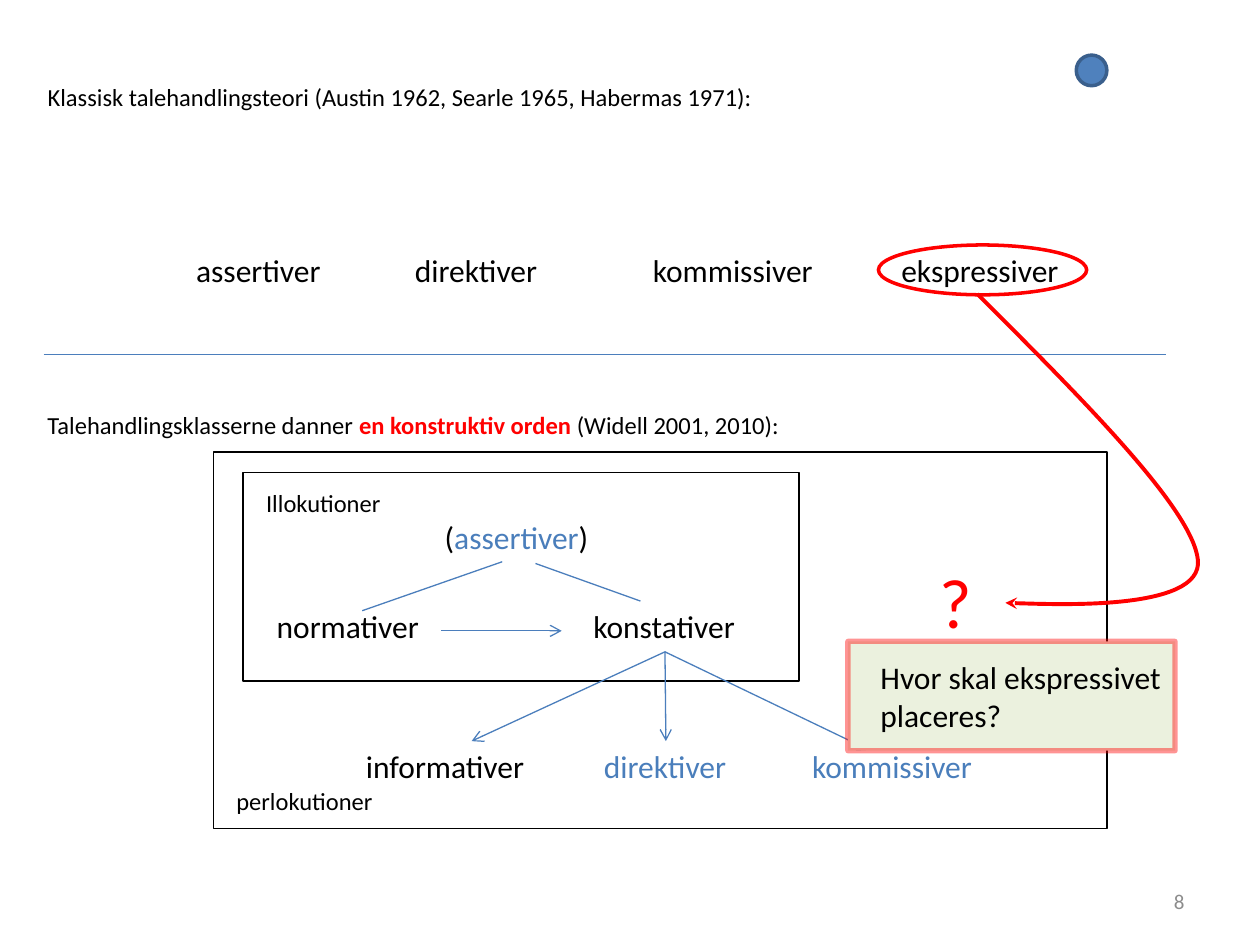
from lxml import etree
from pptx import Presentation
from pptx.dml.color import RGBColor
from pptx.enum import shapes, text
from pptx.oxml import ns
from pptx.util import Pt

COLORS = {"black": "000000", "red": "FF0000", "blue": "4A7EBB", "line": "4B7EBC",
          "dot": "4F81BD", "dot_line": "3A5F8C", "green": "EBF1DE", "grey": "8C8C8C"}
LEFT = text.PP_ALIGN.LEFT
TOP = text.MSO_ANCHOR.TOP


def rgb(name):
    return RGBColor.from_string(COLORS[name])


def sub(parent, tag, **attrs):
    return etree.SubElement(parent, ns.qn(tag), attrs)


def write(sp, paras, size=18, align=LEFT, anchor=TOP, wrap=False, fit=True):
    tf = sp.text_frame
    tf.word_wrap = wrap
    tf.auto_size = text.MSO_AUTO_SIZE.SHAPE_TO_FIT_TEXT if fit else text.MSO_AUTO_SIZE.NONE
    tf.vertical_anchor = anchor
    for i, runs in enumerate(paras):
        p = tf.paragraphs[0] if i == 0 else tf.add_paragraph()
        p.alignment = align
        for words, color, bold in runs:
            r = p.add_run()
            r.text = words
            r.font.name, r.font.size, r.font.bold = "Calibri", Pt(size), bold
            r.font.color.rgb = rgb(color)
    return sp


def plain(words, color="black"):
    return [[(words, color, False)]]


def label(s, x, y, w, paras, size=18, h=29, **options):
    return write(s.shapes.add_textbox(Pt(x), Pt(y), Pt(w), Pt(h)), paras, size, **options)


def outline(s, kind, x, y, w, h, color, width, fill=None):
    sp = s.shapes.add_shape(kind, Pt(x), Pt(y), Pt(w), Pt(h))
    sp.shadow.inherit = False
    sp.line.color.rgb, sp.line.width = rgb(color), Pt(width)
    if fill:
        sp.fill.solid()
        sp.fill.fore_color.rgb = rgb(fill)
    else:
        sp.fill.background()
    return sp


def line(s, x1, y1, x2, y2, arrow=False):
    c = s.shapes.add_connector(shapes.MSO_CONNECTOR.STRAIGHT, Pt(x1), Pt(y1), Pt(x2), Pt(y2))
    c.line.color.rgb, c.line.width = rgb("line"), Pt(0.75)
    if arrow:
        sub(c.line._get_or_add_ln(), "a:tailEnd", type="arrow")
    sub(c._element.spPr, "a:effectLst")
    return c


def classic_theory(s, x, y):
    title = s.shapes.title
    title.left, title.top, title.width, title.height = Pt(x), Pt(y), Pt(421), Pt(24.5)
    write(title, plain("Klassisk talehandlingsteori (Austin 1962, Searle 1965, Habermas 1971):"), 14)
    for words, dx, w in (("assertiver", 85, 86), ("direktiver", 210, 85),
                         ("kommissiver", 346, 107), ("ekspressiver", 488, 105)):
        label(s, x + dx, y + 96.5, w, plain(words))
    outline(s, shapes.MSO_SHAPE.OVAL, x + 482, y + 96.5, 119, 28.5, "red", 2)
    line(s, x + 5, y + 159, x + 646, y + 159)


def constructive_order(s, x, y, w, h):
    label(s, x - 102, y - 28, 433,
          [[("Talehandlingsklasserne danner ", "black", False),
            ("en konstruktiv orden ", "red", True),
            ("(Widell 2001, 2010):", "black", False)]], 14, 24.5)
    outline(s, shapes.MSO_SHAPE.RECTANGLE, x, y, w, h, "black", 1)
    outline(s, shapes.MSO_SHAPE.RECTANGLE, x + 17, y + 11.5, 317.5, 119, "black", 1)
    label(s, x + 23, y + 17, 81, plain("Illokutioner"), 14, 24.5)
    label(s, x + 6, y + 187, 94, plain("perlokutioner"), 14, 24.5)
    label(s, x + 125, y + 34, 102, [[("(", "black", False), ("assertiver", "blue", False),
                                     (")", "black", False)]])
    label(s, x + 29, y + 85, 96, plain("normativer"))
    source = label(s, x + 210, y + 85, 96, plain("konstativer"))
    label(s, x + 80, y + 165, 106, plain("informativer"))
    target = label(s, x + 216, y + 165, 85, plain("direktiver", "blue"))
    label(s, x + 335, y + 165, 107, plain("kommissiver", "blue"))

    line(s, x + 165, y + 62.5, x + 85, y + 90.5)
    line(s, x + 184, y + 63.5, x + 244, y + 85)
    line(s, x + 130, y + 102, x + 199, y + 102, True)
    for dx, dy, goal in ((147.5, 165, None), (258.5, 165, target), (374.5, 170, None)):
        c = line(s, x + 258, y + 114, x + dx, y + dy, True)
        c.begin_connect(source, 2)
        if goal:
            c.end_connect(goal, 0)


def question_curve(s, x, y):
    points = [(61, 61), (123, 123), (126, 152), (129, 181.5), (16, 176.5), (16, 176.5)]
    fb = s.shapes.build_freeform(Pt(x), Pt(y))
    fb.add_line_segments([(Pt(x + dx), Pt(y + dy)) for dx, dy in points], close=False)
    sp = fb.convert_to_shape()
    sp.shadow.inherit = False
    sp.fill.background()
    sp.line.color.rgb, sp.line.width = rgb("red"), Pt(2.25)
    sub(sp.line._get_or_add_ln(), "a:tailEnd", type="stealth")
    steps = sp._element.xpath(".//a:lnTo")
    for i in range(0, len(steps), 3):
        curve = sub(steps[i].getparent(), "a:cubicBezTo")
        for step in steps[i:i + 3]:
            curve.append(step[0])
            step.getparent().remove(step)


def question_box(s, x, y, w, h):
    label(s, x + 45.5, y - 51, 33, plain("?", "red"), 40, 55.5, wrap=True)
    sp = outline(s, shapes.MSO_SHAPE.RECTANGLE, x, y, w, h, "red", 3, "green")
    sub(sp.line._get_or_add_ln().find(".//" + ns.qn("a:srgbClr")), "a:alpha", val="41000")
    label(s, x + 11.5, y + 6, 181,
          plain("Hvor skal ekspressivet") + plain("placeres?"), 18, 51)


def slide_marks(s, w, h):
    outline(s, shapes.MSO_SHAPE.OVAL, w - 105, 31.5, 17.5, 17.5, "dot_line", 2, "dot")
    label(s, w - 204, h - 39.5, 168, plain("8", "grey"), 12, align=text.PP_ALIGN.RIGHT,
          anchor=text.MSO_ANCHOR.MIDDLE, wrap=True, fit=False)


def main():
    prs = Presentation()
    prs.slide_width, prs.slide_height = Pt(720), Pt(540)
    s = prs.slides.add_slide(prs.slide_layouts[5])
    classic_theory(s, 20, 43.5)
    constructive_order(s, 122, 258.5, 510.5, 215)
    question_curve(s, 558.5, 168)
    question_box(s, 484.5, 366.5, 187, 62.5)
    slide_marks(s, 720, 540)
    prs.save("out.pptx")


if __name__ == "__main__":
    main()
